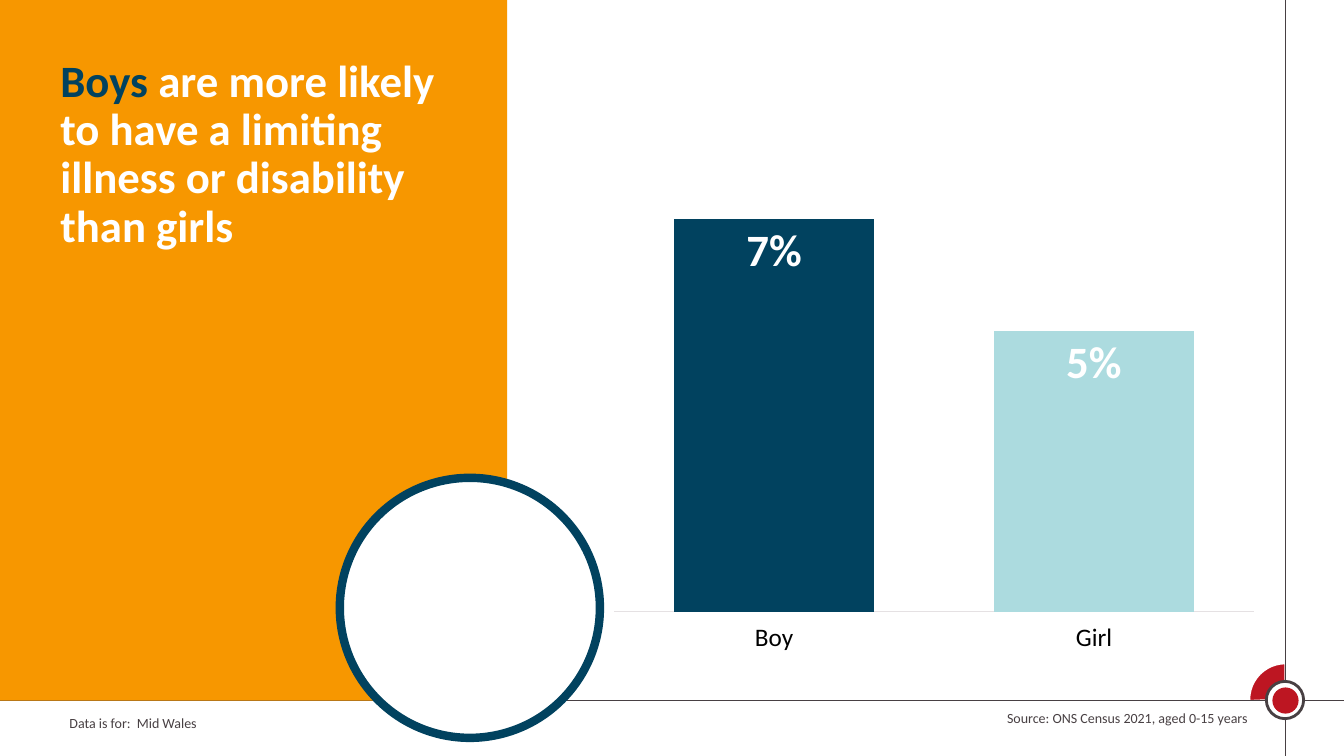
from pptx import Presentation
from pptx.chart.data import CategoryChartData
from pptx.dml.color import RGBColor
from pptx.enum.chart import XL_CHART_TYPE, XL_LABEL_POSITION, XL_TICK_LABEL_POSITION, XL_TICK_MARK
from pptx.enum.shapes import MSO_CONNECTOR, MSO_SHAPE
from pptx.enum.text import PP_ALIGN
from pptx.oxml import parse_xml
from pptx.oxml.ns import nsdecls
from pptx.util import Inches, Pt

NAVY, ORANGE, RED, AQUA = "01425F", "F79700", "BD1622", "ACDBDF"
GREY, WHITE, BLACK, PALE = "484043", "FFFFFF", "000000", "E5E1E3"


def rgb(colour):
    return RGBColor.from_string(colour)


def set_font(font, size, colour, bold=False):
    for name, value in {"name": "Calibri", "size": Pt(size), "bold": bold}.items():
        setattr(font, name, value)
    font.color.rgb = rgb(colour)


prs = Presentation()
prs.slide_width, prs.slide_height = Inches(13.33), Inches(7.5)
s = prs.slides.add_slide(prs.slide_layouts[6])

# Corner badge, rules, orange panel and ring, from back to front
pie = (MSO_SHAPE.PIE, 12.39, 6.58, 0.72, 0.72, RED, WHITE, 1.5)
rules = [(12.75, 0, 12.75, 7.5), (0, 6.95, 13.33, 6.95)]
shapes = [
    pie,
    (MSO_SHAPE.OVAL, 12.56, 6.76, 0.37, 0.37, WHITE, GREY, 2),
    (MSO_SHAPE.OVAL, 12.62, 6.82, 0.26, 0.26, RED, None, 0),
    (MSO_SHAPE.RECTANGLE, -0.01, 0, 5.04, 6.95, ORANGE, None, 0),
    (MSO_SHAPE.OVAL, 3.37, 4.74, 2.58, 2.58, WHITE, NAVY, 6),
]
for item in shapes:
    kind, x, y, w, h, fill, line, width = item
    sp = s.shapes.add_shape(kind, Inches(x), Inches(y), Inches(w), Inches(h))
    sp.shadow.inherit = False
    sp.fill.solid()
    sp.fill.fore_color.rgb = rgb(fill)
    if line:
        sp.line.color.rgb = rgb(line)
        sp.line.width = Pt(width)
    else:
        sp.line.fill.background()
    if item is pie:
        sp.adjustments[0], sp.adjustments[1] = 106.62, 162
        for ends in rules:
            rule = s.shapes.add_connector(MSO_CONNECTOR.STRAIGHT, *map(Inches, ends))
            rule.line.color.rgb = rgb(GREY)
            rule.line.width = Pt(1)
            rule._element.spPr.append(parse_xml(f"<a:effectLst {nsdecls('a')}/>"))

# Footer notes and headline
texts = [
    (0.59, 7.04, 4.39, 0.27, PP_ALIGN.LEFT, 1, 10, False,
     [("Data is for:  Mid Wales", GREY)]),
    (9.52, 6.99, 2.95, 0.27, PP_ALIGN.RIGHT, 1, 10, False,
     [("Source: ONS Census 2021, aged 0-15 years", GREY)]),
    (0.5, 0.53, 4.22, 2.52, PP_ALIGN.LEFT, 0.9, 32, True,
     [("Boys", NAVY),
      (" are more likely to have a limiting illness or disability than girls", WHITE)]),
]
for x, y, w, h, align, spacing, size, bold, runs in texts:
    tf = s.shapes.add_textbox(Inches(x), Inches(y), Inches(w), Inches(h)).text_frame
    tf.word_wrap = True
    p = tf.paragraphs[0]
    p.alignment, p.line_spacing = align, spacing
    for text, colour in runs:
        r = p.add_run()
        r.text = text
        set_font(r.font, size, colour, bold)

# Column chart
data = CategoryChartData(number_format="0%")
data.categories = ["Boy", "Girl"]
data.add_series("Series 1", [0.07, 0.05])
chart = s.shapes.add_chart(XL_CHART_TYPE.COLUMN_CLUSTERED, Inches(5.96), Inches(1.85),
                           Inches(6.61), Inches(4.64), data).chart
chart.has_legend = chart.has_title = False
set_font(chart.font, 16, GREY)

cat_axis, val_axis = chart.category_axis, chart.value_axis
cat_axis.major_tick_mark = cat_axis.minor_tick_mark = XL_TICK_MARK.NONE
cat_axis.tick_label_position = XL_TICK_LABEL_POSITION.LOW
cat_axis.format.line.color.rgb = rgb(PALE)
cat_axis.format.line.width = Pt(0.75)
set_font(cat_axis.tick_labels.font, 18, BLACK)
val_axis.visible = val_axis.has_major_gridlines = False
val_axis.minimum_scale, val_axis.maximum_scale = 0, 0.07

plot = chart.plots[0]
plot.gap_width, plot.vary_by_categories = 60, False
series = plot.series[0]
series.format.fill.solid()
series.format.fill.fore_color.rgb = rgb(AQUA)
for i, colour in enumerate([NAVY, AQUA]):
    fill = series.points[i].format.fill
    fill.solid()
    fill.fore_color.rgb = rgb(colour)
labels = series.data_labels
for name, value in {"show_value": True, "position": XL_LABEL_POSITION.INSIDE_END,
                    "number_format": "0%", "number_format_is_linked": False}.items():
    setattr(labels, name, value)
set_font(labels.font, 32, WHITE, True)

# Fixed plot area, as fractions of the chart frame
plot_area = chart._chartSpace.chart.plotArea
for old in plot_area.findall("{*}layout"):
    plot_area.remove(old)
parts = [("layoutTarget", "inner"), ("xMode", "edge"), ("yMode", "edge"),
         ("x", 0.02), ("y", 0.07), ("w", 0.96), ("h", 0.84)]
tags = "".join(f'<c:{tag} val="{value}"/>' for tag, value in parts)
plot_area.insert(0, parse_xml(
    f"<c:layout {nsdecls('c')}><c:manualLayout>{tags}</c:manualLayout></c:layout>"))

prs.save("out.pptx")
